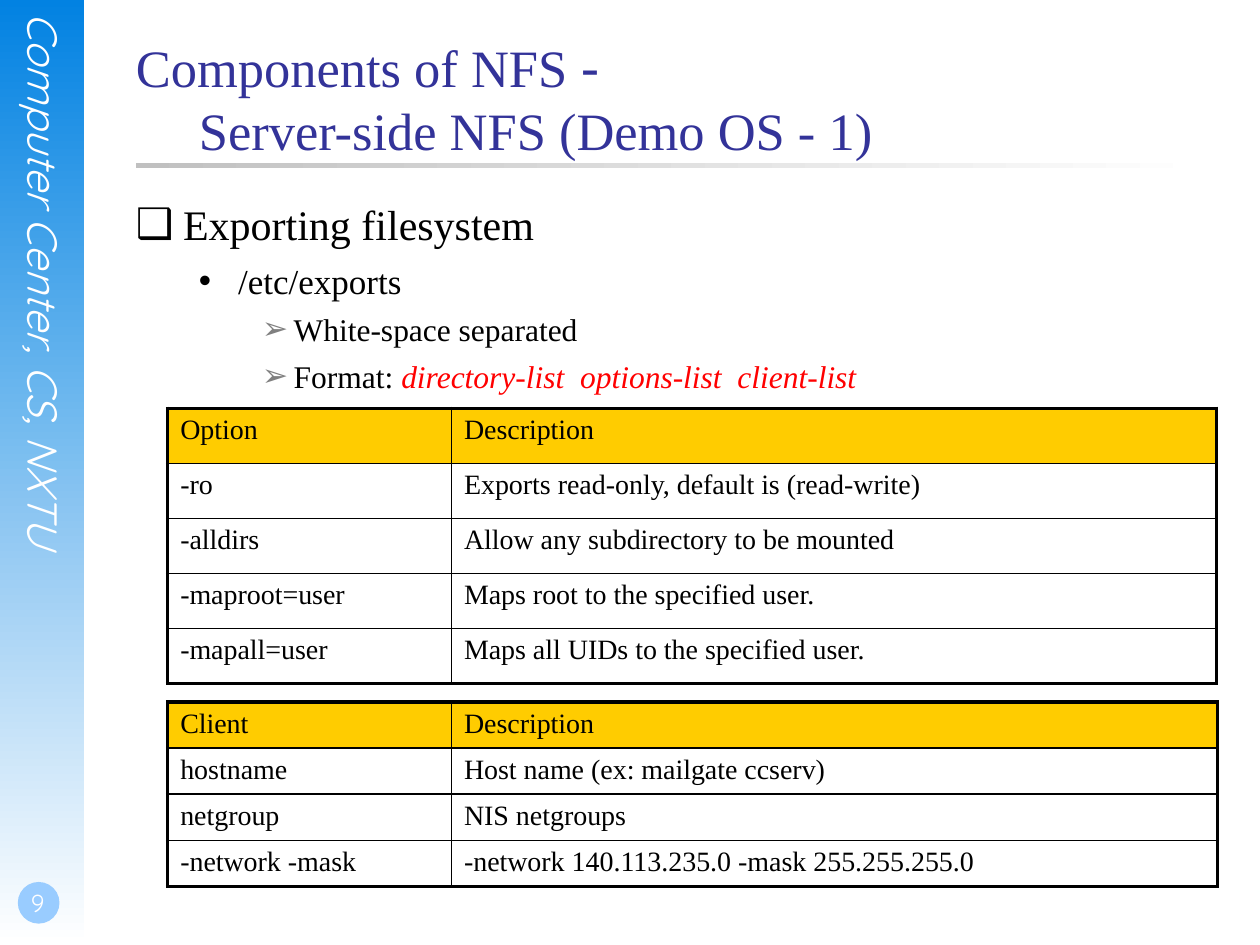
from lxml.etree import SubElement
from pptx import Presentation
from pptx.dml.color import RGBColor
from pptx.enum.shapes import MSO_SHAPE
from pptx.enum.text import MSO_ANCHOR, MSO_AUTO_SIZE, PP_ALIGN
from pptx.oxml import parse_xml
from pptx.oxml.ns import nsdecls, qn
from pptx.util import Cm, Pt

BLACK = RGBColor(0x00, 0x00, 0x00)
WHITE = RGBColor(0xFF, 0xFF, 0xFF)
NAVY = RGBColor(0x33, 0x33, 0x99)
BLUE = RGBColor(0x02, 0x82, 0xE2)
LIGHT_BLUE = RGBColor(0x99, 0xCC, 0xFF)
SILVER = RGBColor(0xC0, 0xC0, 0xC0)
GRAY = RGBColor(0x80, 0x80, 0x80)
RED = RGBColor(0xFF, 0x00, 0x00)
GOLD = RGBColor(0xFF, 0xCC, 0x00)
SERIF, SANS, DASH_FONT = "Times New Roman", "Quicksand", "DejaVu Sans"

TITLE_LINES = ("Components of NFS ", "-", "\tServer-side NFS (Demo OS - 1)")
SIDEBAR_TEXT = "Computer Center, CS, NXTU"
PAGE_NUMBER = "9"

# level, plain text, emphasized text
OUTLINE = [
    (0, "Exporting filesystem", ""),
    (1, "/etc/exports", ""),
    (2, "White-space separated", ""),
    (2, "Format: ", "directory-list  options-list  client-list"),
]
# size in points, indent in cm, hanging part in cm, bullet, bullet color
LEVELS = [
    (24, 0.95, 0.95, "❑", BLACK),
    (20, 2.06, 0.79, "•", BLACK),
    (18, 3.18, 0.64, "➢", GRAY),
]

OPTIONS = [
    ("Option", "Description"),
    ("-ro", "Exports read-only, default is (read-write)"),
    ("-alldirs", "Allow any subdirectory to be mounted"),
    ("-maproot=user", "Maps root to the specified user."),
    ("-mapall=user", "Maps all UIDs to the specified user."),
]
CLIENTS = [
    ("Client", "Description"),
    ("hostname", "Host name (ex: mailgate ccserv)"),
    ("netgroup", "NIS netgroups"),
    ("-network -mask", "-network 140.113.235.0 -mask 255.255.255.0"),
]
# rows, top, row height and second column width in cm
TABLES = [(OPTIONS, 8.23, 1.11, 15.42), (CLIENTS, 14.15, 0.93, 15.44)]
TABLE_LEFT, FIRST_COLUMN = 3.38, 5.72
CONTENT_LEFT, CONTENT_WIDTH = 2.74, 21.59
OUTER_BORDER, INNER_BORDER = Pt(2.25), Pt(1)


def place(shape, left, top, width, height):
    shape.left, shape.top = Cm(left), Cm(top)
    shape.width, shape.height = Cm(width), Cm(height)


def set_font(font, name, size, color):
    font.name, font.size = name, Pt(size)
    font.color.rgb = color


def prepare_frame(shape, anchor=MSO_ANCHOR.TOP):
    frame = shape.text_frame
    frame.auto_size, frame.word_wrap = MSO_AUTO_SIZE.NONE, True
    frame.vertical_anchor = anchor
    frame.margin_left = frame.margin_top = 0
    frame.margin_right = frame.margin_bottom = 0
    return frame


def add_plain_shape(slide, kind, *box):
    shape = slide.shapes.add_shape(kind, *map(Cm, box))
    shape.shadow.inherit = False
    shape.line.fill.background()
    return shape


def add_fading_bar(slide, color, angle, *box):
    """Add a rectangle that fades from the color to white."""
    fill = add_plain_shape(slide, MSO_SHAPE.RECTANGLE, *box).fill
    fill.gradient()
    fill.gradient_angle = angle
    for stop, stop_color in zip(fill.gradient_stops, (color, WHITE)):
        stop.color.rgb = stop_color


def add_label(slide, text, size, anchor, *box):
    frame = prepare_frame(slide.shapes.add_textbox(*map(Cm, box)), anchor)
    paragraph = frame.paragraphs[0]
    paragraph.text = text
    set_font(paragraph.font, SANS, size, WHITE)
    return frame, paragraph


def add_sidebar(slide):
    add_fading_bar(slide, BLUE, 270, 0, 0, 1.7, 19.05)
    frame, paragraph = add_label(
        slide, SIDEBAR_TEXT, 24, MSO_ANCHOR.TOP, 0.38, 0.25, 1.02, 12.98)
    frame._txBody.bodyPr.set("vert", "eaVert")
    paragraph.font.italic = True

    badge = add_plain_shape(slide, MSO_SHAPE.OVAL, 0.36, 17.78, 0.84, 0.84)
    badge.fill.solid()
    badge.fill.fore_color.rgb = LIGHT_BLUE
    frame, paragraph = add_label(
        slide, PAGE_NUMBER, 14, MSO_ANCHOR.BOTTOM, 0, 17.35, 1.47, 1.27)
    frame.margin_left, frame.margin_bottom = Cm(0.05), Cm(0.13)
    paragraph.alignment = PP_ALIGN.CENTER


def fill_title(title):
    place(title, CONTENT_LEFT, 0.71, CONTENT_WIDTH, 3.18)
    paragraph = prepare_frame(title).paragraphs[0]
    paragraph.alignment = PP_ALIGN.LEFT
    set_font(paragraph.font, SERIF, 30, NAVY)
    first, dash, second = TITLE_LINES
    paragraph.add_run().text = first
    dash_run = paragraph.add_run()
    dash_run.text, dash_run.font.name = dash, DASH_FONT
    paragraph.add_line_break()
    paragraph.add_run().text = second


def set_bullet(paragraph, indent, hanging, character, color):
    properties = paragraph._p.get_or_add_pPr()
    properties.set("marL", str(Cm(indent)))
    properties.set("indent", str(-Cm(hanging)))
    bullet_color = SubElement(properties, qn("a:buClr"))
    SubElement(bullet_color, qn("a:srgbClr")).set("val", str(color))
    SubElement(properties, qn("a:buChar")).set("char", character)


def fill_outline(body):
    place(body, CONTENT_LEFT, 4.01, CONTENT_WIDTH, 12.9)
    frame = prepare_frame(body)
    for index, (level, text, emphasis) in enumerate(OUTLINE):
        paragraph = frame.add_paragraph() if index else frame.paragraphs[0]
        size, *bullet = LEVELS[level]
        paragraph.level = level
        paragraph.space_before = Pt(size * 0.28)
        set_bullet(paragraph, *bullet)
        set_font(paragraph.font, SERIF, size, BLACK)
        paragraph.add_run().text = text
        if emphasis:
            run = paragraph.add_run()
            run.text, run.font.italic = emphasis, True
            run.font.color.rgb = RED


def set_borders(cell, outer_sides):
    properties = cell._tc.get_or_add_tcPr()
    for position, side in enumerate("LRTB"):
        width = OUTER_BORDER if side in outer_sides else INNER_BORDER
        properties.insert(position, parse_xml(
            f'<a:ln{side} {nsdecls("a")} w="{width}"><a:solidFill>'
            f'<a:srgbClr val="{BLACK}"/></a:solidFill></a:ln{side}>'))


def add_description_table(slide, rows, top, row_height, second_column):
    widths = (FIRST_COLUMN, second_column)
    table = slide.shapes.add_table(
        len(rows), len(widths), Cm(TABLE_LEFT), Cm(top),
        Cm(sum(widths)), Cm(row_height * len(rows))).table
    table.first_row = table.horz_banding = False
    for column, width in zip(table.columns, widths):
        column.width = Cm(width)
    for row_index, texts in enumerate(rows):
        table.rows[row_index].height = Cm(row_height)
        for column_index, text in enumerate(texts):
            cell = table.cell(row_index, column_index)
            paragraph = cell.text_frame.paragraphs[0]
            paragraph.text = text
            set_font(paragraph.font, SERIF, 16, BLACK)
            outer_sides = "LR"[column_index]
            if row_index == 0:
                cell.fill.solid()
                cell.fill.fore_color.rgb = GOLD
                outer_sides += "T"
            else:
                cell.fill.background()
            if row_index == len(rows) - 1:
                outer_sides += "B"
            set_borders(cell, outer_sides)


def main():
    presentation = Presentation()
    presentation.slide_width, presentation.slide_height = Cm(25.4), Cm(19.05)
    slide = presentation.slides.add_slide(presentation.slide_layouts[1])
    title, body = slide.placeholders
    add_sidebar(slide)
    add_fading_bar(slide, SILVER, 0, CONTENT_LEFT, 3.28, CONTENT_WIDTH, 0.1)
    fill_title(title)
    fill_outline(body)
    for placeholder in (title, body):  # bring text in front of the bars
        slide.shapes._spTree.append(placeholder._element)
    for table in TABLES:
        add_description_table(slide, *table)
    presentation.save("out.pptx")


if __name__ == "__main__":
    main()
